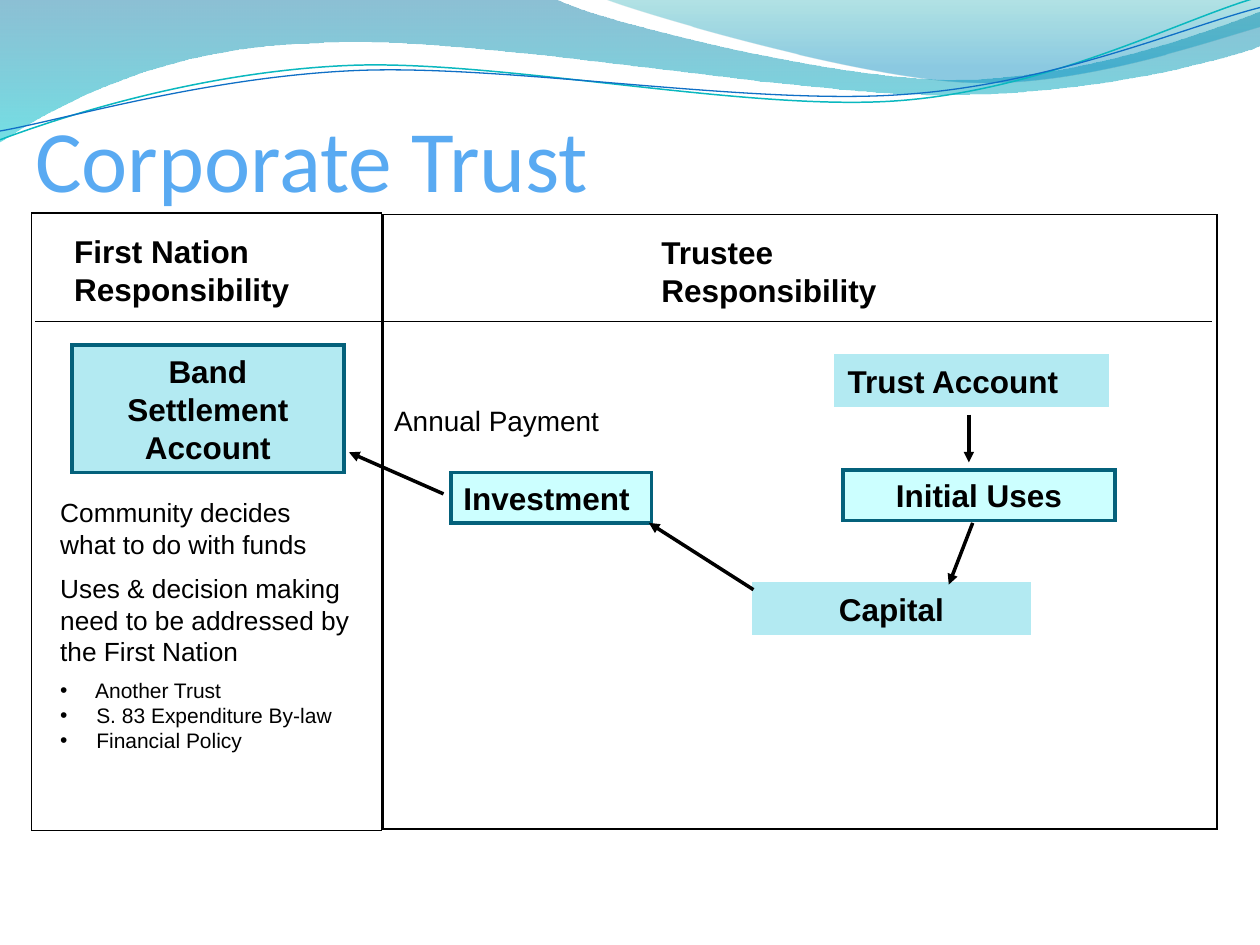
import pptx
import pptx.dml.color
import pptx.enum.shapes
import pptx.enum.text
import pptx.oxml.ns
import pptx.util
from lxml import etree

Inches = pptx.util.Inches
Pt = pptx.util.Pt
Align = pptx.enum.text.PP_ALIGN
Anchor = pptx.enum.text.MSO_ANCHOR
BLACK, NAVY, PALE, MINT = "000000", "04617B", "B3EAF2", "CCFFFF"

BANDS = [
    ([(0, 0), (4.4, -0.01), (4.76, 0.17, 6.64, 0.63, 7.58, 0.63),
      (8.53, 0.63, 9.58, 0.26, 10, 0.09), (10.01, 0.36),
      (9.83, 0.44, 8.7, 0.76, 7.46, 0.75), (6.22, 0.75, 3.82, 0.28, 2.57, 0.34),
      (1.29, 0.36, 0.46, 0.83, -0.01, 1.13), (0, 0)],
     [(0, "0074A1", 45), (1, "00C6CF", 55)]),
    ([(4.79, -0.01), (5.09, 0.11, 6.82, 0.62, 7.69, 0.65),
      (8.56, 0.69, 9.61, 0.32, 10, 0.21), (10, 0), (4.79, -0.01)],
     [(0, "00A1A9", 30), (0.8, "008BBF", 45)]),
]
WAVES = [
    ([(0, 1.11), (0.48, 0.93, 1.58, 0.57, 2.77, 0.52),
      (3.95, 0.47, 5.93, 0.89, 7.13, 0.8), (8.33, 0.71, 9.38, 0.15, 9.98, -0.02)],
     "0AB8BF", 0.85),
    ([(0, 1.04), (0.47, 0.96, 1.64, 0.61, 2.83, 0.56),
      (4.03, 0.51, 5.97, 0.84, 7.17, 0.75), (8.36, 0.67, 9.41, 0.21, 10, 0.06)],
     "0F6FC6", 0.75),
]
PANELS = [(0.25, 1.69, 2.78, 4.9), (3.04, 1.7, 6.62, 4.88)]
BOXES = [
    ("Band Settlement Account", (0.57, 2.74, 2.16, 1.01), PALE, NAVY, Align.CENTER),
    ("Trust Account", (6.63, 2.82, 2.16, 0.4), PALE, PALE, Align.LEFT),
    ("Initial Uses", (6.69, 3.73, 2.16, 0.4), MINT, NAVY, Align.CENTER),
    ("Capital", (5.98, 4.63, 2.19, 0.4), PALE, PALE, Align.CENTER),
    ("Investment", (3.58, 3.75, 1.59, 0.4), MINT, NAVY, Align.LEFT),
]
ARROWS = [
    ((5.98, 4.68), (5.15, 4.15)),
    ((3.52, 3.92), (2.77, 3.59)),
    ((7.69, 3.29), (7.69, 3.67)),
    ((7.72, 4.15), (7.53, 4.64)),
]
LABELS = [
    ("Annual Payment", (3.03, 3.15, 1.89, 0.37), 16, False),
    ("First Nation Responsibility", (0.49, 1.79, 2.22, 0.71), 18, True),
    ("Trustee Responsibility", (5.15, 1.8, 2.22, 0.71), 18, True),
]
NOTES = [
    ("Community decides", 15, 8, 0, False),
    ("what to do with funds", 15, 0, 0, False),
    ("Uses & decision making need to be addressed by the First Nation", 15, 7.5, 6, False),
    (" Another Trust", 12, 0, 0, True),
    (" S. 83 Expenditure By-law", 12, 0, 0, True),
    (" Financial Policy", 12, 0, 0, True),
]


def color(code):
    """Turn a hex string into a colour."""
    return pptx.dml.color.RGBColor.from_string(code)


def add_tag(node, name, **values):
    """Append a drawing element to a node."""
    return etree.SubElement(node, pptx.oxml.ns.qn(name), **values)


def draw(slide, parts, close):
    """Build an outline whose six-number parts are cubic curves."""
    ends = [tuple(map(Inches, part[-2:])) for part in parts]
    pen = slide.shapes.build_freeform(*ends[0])
    pen.add_line_segments(ends[1:], close=close)
    shape = pen.convert_to_shape()
    shape.shadow.inherit = False
    sides = list(shape.element.iter(pptx.oxml.ns.qn("a:lnTo")))
    for side, part in zip(sides, parts[1:]):
        if len(part) == 2:
            continue
        curve = etree.Element(pptx.oxml.ns.qn("a:cubicBezTo"))
        for x, y in zip(part[::2], part[1::2]):
            add_tag(curve, "a:pt", x=str(Inches(x) - shape.left),
                    y=str(Inches(y) - shape.top))
        side.getparent().replace(side, curve)
    return shape


def add_band(slide, parts, stops):
    """Add a filled wave with a see-through gradient."""
    shape = draw(slide, parts, True)
    shape.line.fill.background()
    shape.fill.gradient()
    shape.fill.gradient_angle = 270
    for stop, (place, code, solid) in zip(shape.fill.gradient_stops, stops):
        stop.position = place
        stop.color.rgb = color(code)
    tags = shape.element.iter(pptx.oxml.ns.qn("a:srgbClr"))
    for tag, (place, code, solid) in zip(tags, stops):
        add_tag(tag, "a:alpha", val=str(solid * 1000))


def add_wave(slide, parts, code, width):
    """Add an open wave line."""
    shape = draw(slide, parts, False)
    shape.fill.background()
    shape.line.color.rgb = color(code)
    shape.line.width = Pt(width)


def add_box(slide, place, fill, line, width):
    """Add a sharp-cornered rectangle, empty inside when fill is None."""
    kind = pptx.enum.shapes.MSO_SHAPE.RECTANGLE
    shape = slide.shapes.add_shape(kind, *map(Inches, place))
    shape.shadow.inherit = False
    if fill:
        shape.fill.solid()
        shape.fill.fore_color.rgb = color(fill)
    else:
        shape.fill.background()
    shape.line.color.rgb = color(line)
    shape.line.width = Pt(width)
    add_tag(shape.line._get_or_add_ln(), "a:miter", lim="800000")
    return shape


def style(para, text, size, bold=False, code=BLACK, face="Arial", align=Align.LEFT):
    """Fill a paragraph and set its font."""
    para.text = text
    para.alignment = align
    para.font.name = face
    para.font.size = Pt(size)
    para.font.bold = bold
    para.font.color.rgb = color(code)


def add_text(slide, place):
    """Add a wrapping text box and return its frame."""
    frame = slide.shapes.add_textbox(*map(Inches, place)).text_frame
    frame.word_wrap = True
    return frame


def add_line(slide, start, end, width, arrow=False):
    """Add a straight black line, with an arrowhead if asked."""
    kind = pptx.enum.shapes.MSO_CONNECTOR.STRAIGHT
    line = slide.shapes.add_connector(kind, *map(Inches, start + end))
    line.line.color.rgb = color(BLACK)
    line.line.width = Pt(width)
    if arrow:
        add_tag(line.line._get_or_add_ln(), "a:tailEnd", type="triangle")
    add_tag(line.element.spPr, "a:effectLst")


def add_notes(slide, place):
    """Add the remarks with their bullet list."""
    frame = add_text(slide, place)
    for row, (text, size, before, after, dot) in enumerate(NOTES):
        para = frame.add_paragraph() if row else frame.paragraphs[0]
        style(para, text, size)
        para.space_before = Pt(before)
        para.space_after = Pt(after)
        if dot:
            props = para._p.get_or_add_pPr()
            props.set("marL", str(Inches(0.24)))
            props.set("indent", str(-Inches(0.24)))
            add_tag(props, "a:buFont", typeface="Arial")
            add_tag(props, "a:buChar", char="•")
            props.append(props.find(pptx.oxml.ns.qn("a:defRPr")))


def add_title(slide, text, place):
    """Add the heading, set on the bottom of its box."""
    frame = add_text(slide, place)
    frame.vertical_anchor = Anchor.BOTTOM
    frame.margin_left = frame.margin_right = frame.margin_bottom = 0
    style(frame.paragraphs[0], text, 50, code="59AAF2", face="Calibri")


def main():
    """Build the slide and save it."""
    deck = pptx.Presentation()
    deck.slide_width, deck.slide_height = Inches(10), Inches(7.5)
    slide = deck.slides.add_slide(deck.slide_layouts[6])
    for band in BANDS:
        add_band(slide, *band)
    for wave in WAVES:
        add_wave(slide, *wave)
    for place in PANELS:
        add_box(slide, place, None, BLACK, 0.75)
    for text, place, fill, line, align in BOXES:
        frame = add_box(slide, place, fill, line, 2).text_frame
        frame.word_wrap = True
        frame.vertical_anchor = Anchor.MIDDLE
        style(frame.paragraphs[0], text, 18, True, align=align)
    for start, end in ARROWS:
        add_line(slide, start, end, 2, True)
    add_line(slide, (0.28, 2.55), (9.62, 2.55), 0.75)
    for text, place, size, bold in LABELS:
        style(add_text(slide, place).paragraphs[0], text, size, bold)
    add_title(slide, "Corporate Trust", (0.28, 0.15, 9, 1.52))
    add_notes(slide, (0.38, 3.89, 2.56, 2.18))
    deck.save("out.pptx")


if __name__ == "__main__":
    main()
